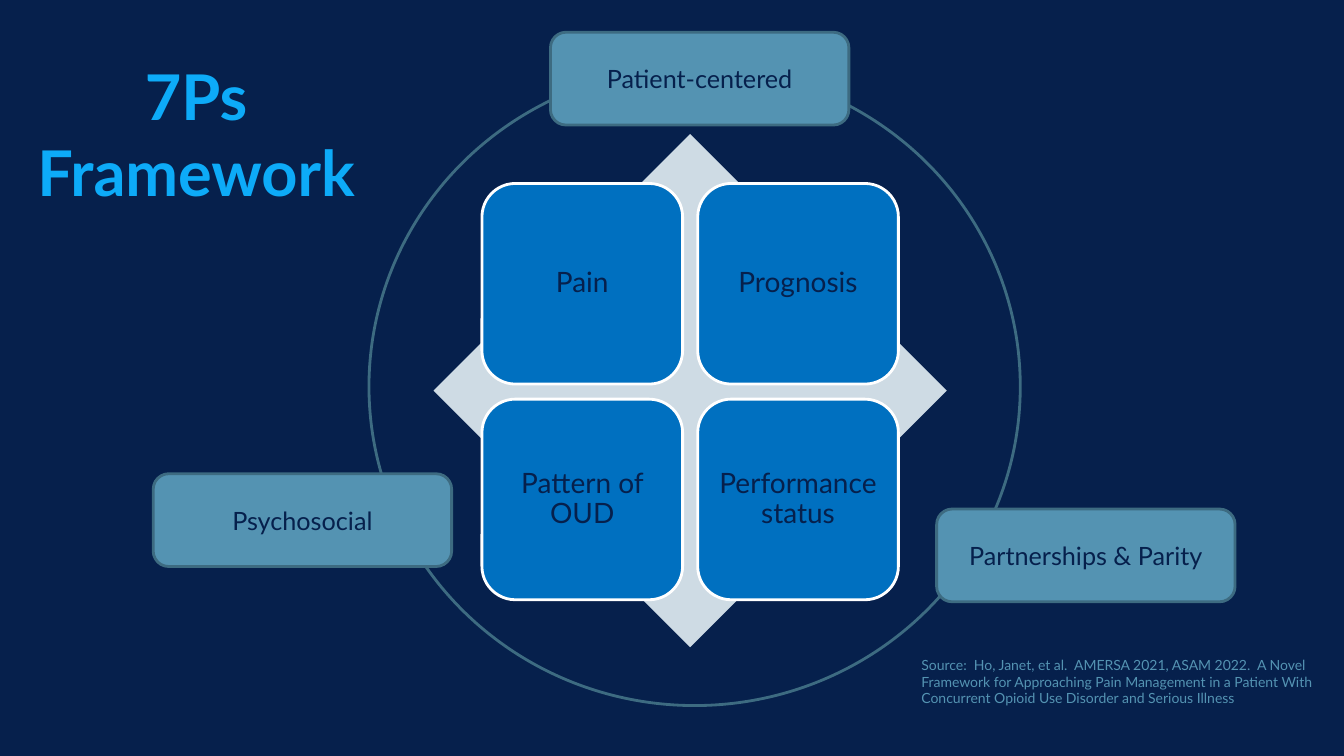
from dataclasses import dataclass

import pptx
import pptx.dml.color
import pptx.enum.shapes
import pptx.enum.text
import pptx.util

Inches = pptx.util.Inches
SHAPE = pptx.enum.shapes.MSO_SHAPE
ALIGN = pptx.enum.text.PP_ALIGN
ANCHOR = pptx.enum.text.MSO_ANCHOR

COLORS = {
    "navy": "06204C", "pale": "CEDBE4", "blue": "0070C0", "white": "FFFFFF",
    "steel": "5493B2", "slate": "3D6B81", "sky": "0DABF8",
}


@dataclass
class Box:
    left: float
    top: float
    width: float
    height: float


@dataclass
class TextStyle:
    size: int
    color: str = "navy"
    bold: bool = False
    align: ALIGN = ALIGN.CENTER
    anchor: ANCHOR = ANCHOR.MIDDLE
    margin_x: float = 0.1
    margin_y: float = 0.05
    spacing: float = 1.0


@dataclass
class Label:
    text: str
    left: float
    top: float


TITLE = TextStyle(45, "sky", bold=True, margin_x=0, margin_y=0.01)
SQUARE = TextStyle(20, margin_x=0.08, margin_y=0.08, spacing=0.9)
OUTER = TextStyle(18)
SOURCE = TextStyle(10, "steel", align=ALIGN.LEFT, anchor=ANCHOR.TOP, margin_y=0.1)


def rgb(name: str) -> pptx.dml.color.RGBColor:
    return pptx.dml.color.RGBColor.from_string(COLORS[name])


def lengths(box: Box) -> list:
    return [Inches(v) for v in (box.left, box.top, box.width, box.height)]


def set_all(target, values: dict) -> None:
    for name, value in values.items():
        setattr(target, name, value)


def write(sp, text: str, style: TextStyle) -> None:
    tf = sp.text_frame
    set_all(tf, {
        "word_wrap": True, "vertical_anchor": style.anchor,
        "margin_left": Inches(style.margin_x), "margin_right": Inches(style.margin_x),
        "margin_top": Inches(style.margin_y), "margin_bottom": Inches(style.margin_y),
    })
    p = tf.paragraphs[0]
    set_all(p, {"alignment": style.align, "line_spacing": style.spacing})
    r = p.add_run()
    r.text = text
    set_all(r.font, {"name": "Lato", "size": pptx.util.Pt(style.size), "bold": style.bold})
    r.font.color.rgb = rgb(style.color)


def add_shape(s, kind: SHAPE, box: Box, fill: str = "", line: str = ""):
    sp = s.shapes.add_shape(kind, *lengths(box))
    sp.shadow.inherit = False
    if fill:
        sp.fill.solid()
        sp.fill.fore_color.rgb = rgb(fill)
    else:
        sp.fill.background()
    if line:
        sp.line.color.rgb = rgb(line)
        sp.line.width = pptx.util.Pt(2)
    else:
        sp.line.fill.background()
    return sp


def add_text(s, box: Box, text: str, style: TextStyle) -> None:
    write(s.shapes.add_textbox(*lengths(box)), text, style)


def main() -> None:
    prs = pptx.Presentation()
    set_all(prs, {"slide_width": Inches(13.33), "slide_height": Inches(7.5)})
    s = prs.slides.add_slide(prs.slide_layouts[6])
    s.background.fill.solid()
    s.background.fill.fore_color.rgb = rgb("navy")

    # Diamond behind a two-by-two grid of squares
    add_shape(s, SHAPE.DIAMOND, Box(4.3, 1.33, 5.09, 5.09), "pale")
    side, pitch = 1.99, 2.14
    for i, text in enumerate(["Pain", "Prognosis", "Pattern of OUD", "Performance status"]):
        row, col = divmod(i, 2)
        box = Box(4.78 + col * pitch, 1.82 + row * pitch, side, side)
        write(add_shape(s, SHAPE.ROUNDED_RECTANGLE, box, "blue", "white"), text, SQUARE)

    # Ring with the three outer principles
    add_shape(s, SHAPE.OVAL, Box(3.66, 0.67, 6.46, 6.33), line="slate")
    for label in (Label("Psychosocial", 1.52, 4.7),
                  Label("Patient-centered", 5.46, 0.32),
                  Label("Partnerships & Parity", 9.29, 5.05)):
        box = Box(label.left, label.top, 2.96, 0.92)
        sp = add_shape(s, SHAPE.ROUNDED_RECTANGLE, box, "steel", "slate")
        write(sp, label.text, OUTER)

    # Title and source
    add_text(s, Box(0.28, 0.32, 3.33, 2), "7Ps Framework", TITLE)
    add_text(s, Box(9.04, 6.41, 4.29, 0.71),
             "Source:  Ho, Janet, et al.  AMERSA 2021, ASAM 2022.  A Novel Framework for "
             "Approaching Pain Management in a Patient With Concurrent Opioid Use Disorder "
             "and Serious Illness", SOURCE)

    prs.save("out.pptx")


if __name__ == "__main__":
    main()
